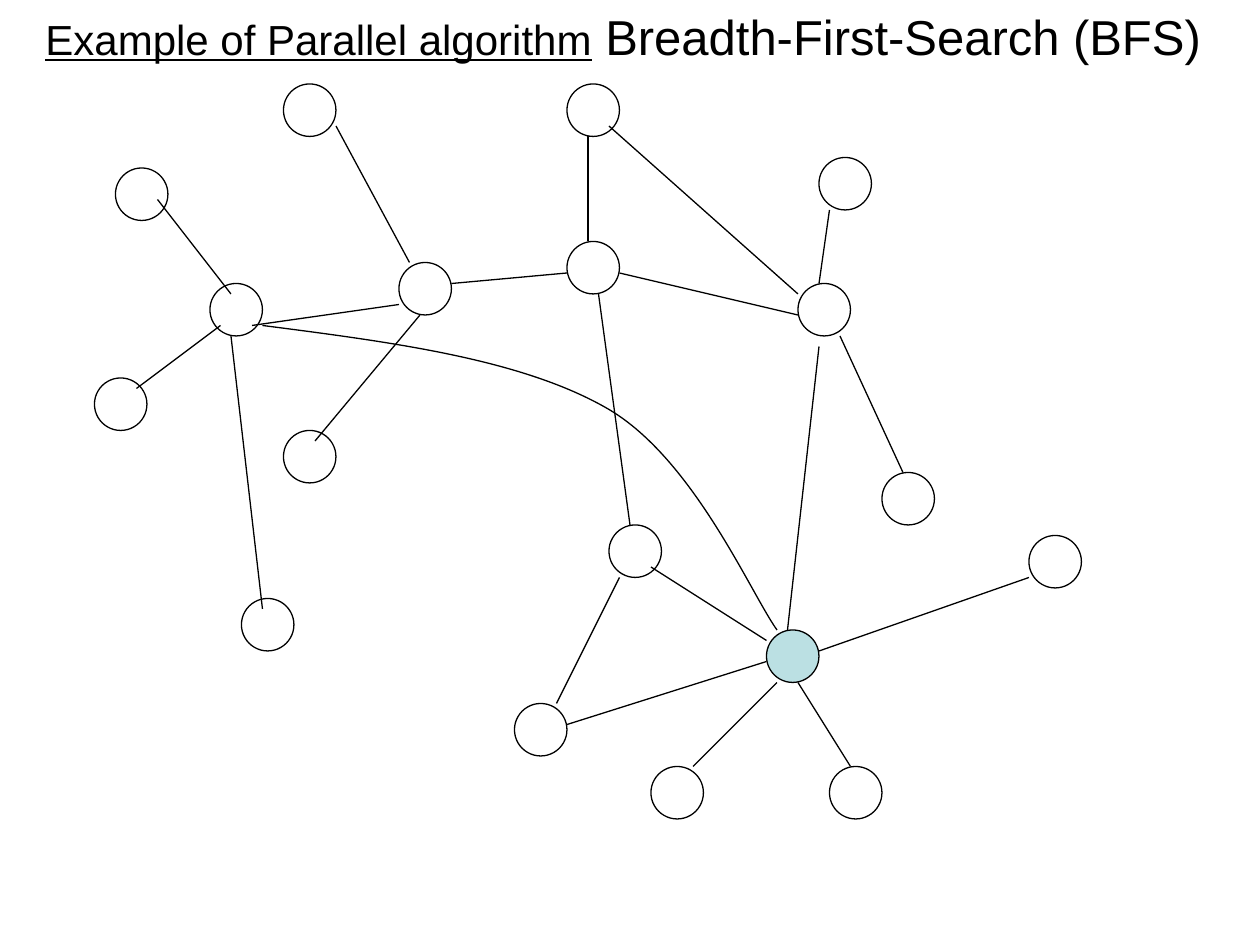
from lxml import etree
from pptx import Presentation, util as u
from pptx.dml.color import RGBColor
from pptx.enum import shapes, text
from pptx.oxml.ns import qn

GRID = 6  # points per grid step
NODE_SIZE = 5  # grid steps
BLACK = "000000"

# Top left corners of the graph's nodes, in grid steps
NODES = [
    (38, 25), (11, 16), (20, 27), (27, 8), (78, 15), (23, 57),
    (54, 23), (54, 8), (98, 51), (49, 67), (58, 50), (27, 41),
    (9, 36), (76, 27), (84, 45), (62, 73), (79, 73),
]
START_NODE = (73, 60)

# Straight edges: x and y of both ends, in grid steps
EDGES = [
    (78, 33, 75, 60), (78, 27, 79, 20), (59, 26, 76, 30), (80, 32, 86, 45),
    (78, 62, 98, 55), (76, 65, 81, 73), (74, 65, 66, 73), (54, 69, 73, 63),
    (62, 54, 73, 61), (22, 32, 25, 58), (24, 31, 38, 29), (15, 19, 22, 28),
    (21, 31, 13, 37), (40, 30, 30, 42), (32, 12, 39, 25), (58, 12, 76, 28),
    (56, 13, 56, 23), (57, 28, 60, 50), (43, 27, 54, 26), (59, 55, 53, 67),
]

# Curved edge: start, then two controls and an end for each Bézier piece
CURVE = [(25, 31), (37.4, 32.6), (49.8, 34.2), (58, 39),
         (66.1, 43.8), (71.5, 56.5), (74, 60)]


def color(value):
    return RGBColor.from_string(value)


def steps(value):
    return u.Pt(value * GRID)


def set_line(shape):
    shape.line.color.rgb = color(BLACK)
    shape.line.width = u.Pt(0.75)


def add_node(page, left, top, fill=None):
    node = page.shapes.add_shape(
        shapes.MSO_SHAPE.OVAL, steps(left), steps(top),
        steps(NODE_SIZE), steps(NODE_SIZE))
    node.shadow.inherit = False
    if fill:
        node.fill.solid()
        node.fill.fore_color.rgb = color(fill)
    else:
        node.fill.background()
    set_line(node)


def add_edge(page, *ends):
    edge = page.shapes.add_connector(
        shapes.MSO_CONNECTOR.STRAIGHT, *map(steps, ends))
    set_line(edge)
    etree.SubElement(edge.element.spPr, qn("a:effectLst"))


def add_curve(page, points):
    corners = [(steps(x), steps(y)) for x, y in points]
    builder = page.shapes.build_freeform(*corners[0])
    builder.add_line_segments(corners[1:], close=False)
    curve = builder.convert_to_shape()
    curve.shadow.inherit = False
    curve.fill.background()
    set_line(curve)
    # Each three straight segments become one cubic Bézier piece
    segments = list(curve.element.iter(qn("a:lnTo")))
    for first in range(0, len(segments), 3):
        bezier = etree.Element(qn("a:cubicBezTo"))
        segments[first].addprevious(bezier)
        for segment in segments[first:first + 3]:
            bezier.append(segment[0])
            segment.getparent().remove(segment)


def add_title(page, spans):
    box = page.shapes.add_textbox(0, 0, u.Pt(720), u.Pt(41))
    frame = box.text_frame
    frame.word_wrap = True
    frame.auto_size = text.MSO_AUTO_SIZE.SHAPE_TO_FIT_TEXT
    para = frame.paragraphs[0]
    para.alignment = text.PP_ALIGN.CENTER
    for words, format_values in spans:
        span = para.add_run()
        span.text = words
        span.font.color.rgb = color(BLACK)
        for name, value in {"name": "Arial", **format_values}.items():
            setattr(span.font, name, value)


def main():
    deck = Presentation()
    deck.slide_width, deck.slide_height = u.Pt(720), u.Pt(540)
    page = deck.slides.add_slide(deck.slide_layouts[6])

    # Graph
    for corner in NODES:
        add_node(page, *corner)
    add_node(page, *START_NODE, fill="BBE0E3")
    for ends in EDGES:
        add_edge(page, *ends)
    add_curve(page, CURVE)

    # Title
    add_title(page, [
        ("Example of Parallel algorithm", {"size": u.Pt(24), "underline": True}),
        (" Breadth-First-Search (BFS) ", {"size": u.Pt(28), "underline": False}),
    ])
    deck.save("out.pptx")


if __name__ == "__main__":
    main()
